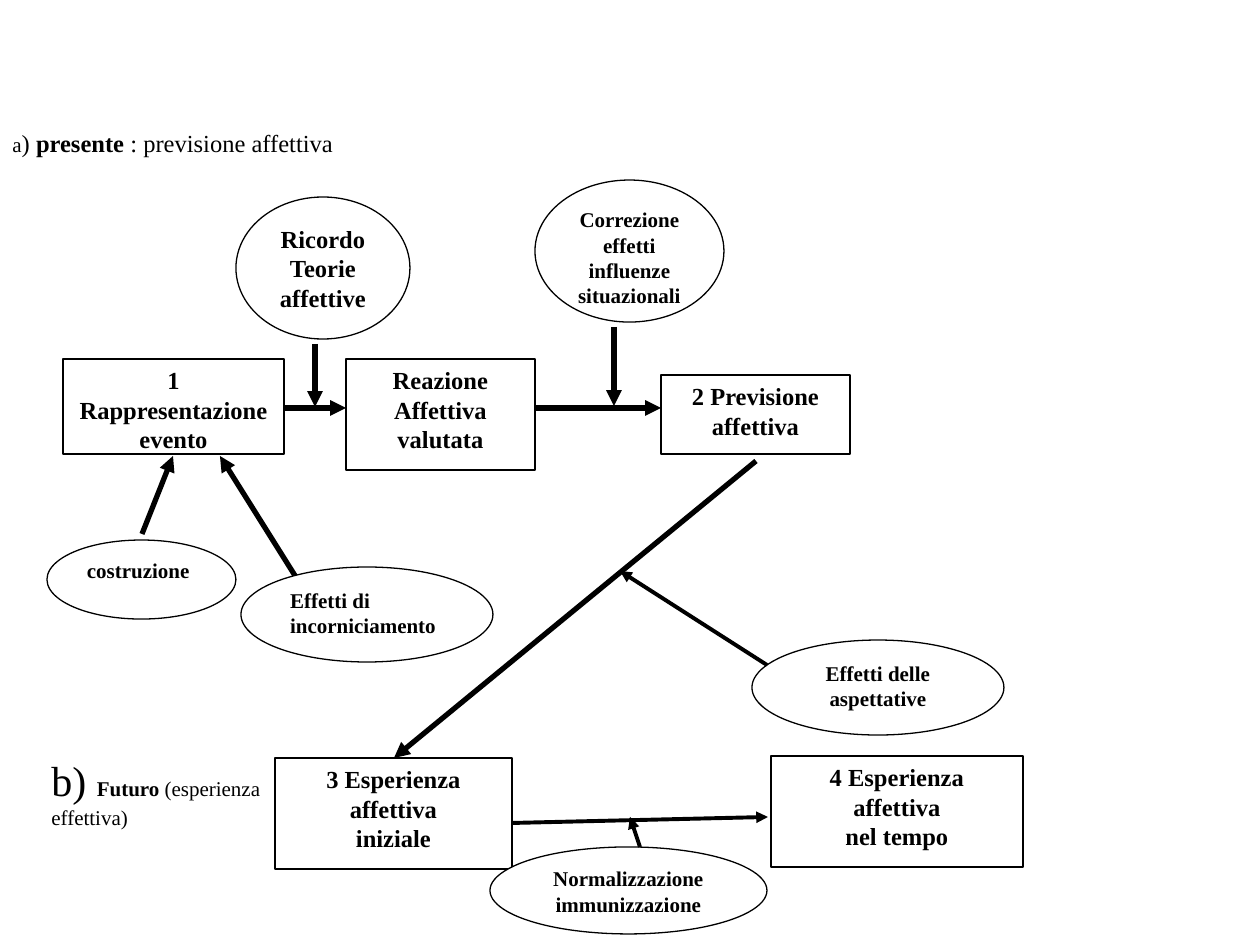
from lxml.etree import SubElement
from pptx import Presentation
from pptx.dml.color import RGBColor
from pptx.enum.shapes import MSO_CONNECTOR, MSO_SHAPE
from pptx.enum.text import MSO_ANCHOR, PP_ALIGN
from pptx.oxml.ns import qn
from pptx.util import Pt

EMU_PER_PX = 914400 / 126
FONT = "Times New Roman"
BLACK = "000000"
WHITE = "FFFFFF"


def px(length):
    return round(length * EMU_PER_PX)


def color(value):
    return RGBColor.from_string(value)


def style(font, size, bold):
    font.name = FONT
    font.size = Pt(size)
    font.bold = bold
    font.color.rgb = color(BLACK)


def add_node(slide, origin, kind, place, words, size, align=PP_ALIGN.CENTER):
    left, top, width, height = place
    node = slide.shapes.add_shape(
        kind, px(origin[0] + left), px(origin[1] + top), px(width), px(height)
    )
    node.shadow.inherit = False
    node.fill.solid()
    node.fill.fore_color.rgb = color(WHITE)
    node.line.color.rgb = color(BLACK)
    node.line.width = Pt(0.75)
    frame = node.text_frame
    frame.word_wrap = True
    frame.vertical_anchor = MSO_ANCHOR.TOP
    frame.text = words
    for paragraph in frame.paragraphs:
        paragraph.alignment = align
        for run in paragraph.runs:
            style(run.font, size, True)


def add_box(slide, origin, place, words):
    add_node(slide, origin, MSO_SHAPE.RECTANGLE, place, words, 14)


def add_oval(slide, origin, place, words, size=12, align=PP_ALIGN.CENTER):
    add_node(slide, origin, MSO_SHAPE.OVAL, place, words, size, align)


def add_arrow(slide, origin, start, end, weight):
    x, y = origin
    arrow = slide.shapes.add_connector(
        MSO_CONNECTOR.STRAIGHT,
        px(x + start[0]), px(y + start[1]), px(x + end[0]), px(y + end[1]),
    )
    arrow.line.color.rgb = color(BLACK)
    arrow.line.width = Pt(weight)
    SubElement(arrow.line._get_or_add_ln(), qn("a:tailEnd"), type="triangle")
    SubElement(arrow._element.spPr, qn("a:effectLst"))


def add_heading(slide, origin, place, parts):
    left, top, width, height = place
    heading = slide.shapes.add_textbox(
        px(origin[0] + left), px(origin[1] + top), px(width), px(height)
    )
    heading.text_frame.word_wrap = True
    paragraph = heading.text_frame.paragraphs[0]
    for words, size, bold in parts:
        run = paragraph.add_run()
        run.text = words
        style(run.font, size, bold)


def add_present(slide, origin):
    add_heading(slide, origin, (0, 2, 1260, 42), [
        ("a", 12, False), (") ", 14, False), ("presente", 14, True),
        (" : previsione affettiva", 14, False),
    ])
    add_box(slide, origin, (63, 239, 221, 95), "1\nRappresentazione\nevento")
    add_box(slide, origin, (346, 239, 189, 111), "Reazione\nAffettiva\nvalutata")
    add_box(slide, origin, (661, 255, 189, 79), "2 Previsione\naffettiva")
    add_oval(slide, origin, (236, 77, 174, 142), "Ricordo\nTeorie\naffettive", 14)
    add_oval(slide, origin, (535, 60, 189, 142),
             "Correzione effetti influenze situazionali")
    for start, end in [
        ((142, 414), (173, 336)), ((299, 462), (220, 336)),
        ((284, 288), (346, 288)), ((535, 288), (661, 288)),
        ((614, 207), (614, 286)), ((315, 224), (315, 287)),
    ]:
        add_arrow(slide, origin, start, end, 3)
    add_oval(slide, origin, (47, 420, 189, 79), "costruzione", align=PP_ALIGN.LEFT)
    add_oval(slide, origin, (241, 447, 252, 95), "Effetti di\nincorniciamento",
             align=PP_ALIGN.LEFT)


def add_expectations(slide, origin):
    add_arrow(slide, origin, (363, 1), (1, 298), 3)
    add_oval(slide, origin, (359, 180, 252, 95), "Effetti delle\naspettative")
    add_arrow(slide, origin, (374, 205), (227, 111), 2.25)


def add_future(slide, origin):
    add_box(slide, origin, (236, 10, 237, 111), "3 Esperienza\naffettiva\niniziale")
    add_heading(slide, origin, (0, 0, 256, 90), [
        ("b) ", 24, False), ("Futuro", 12, True),
        (" (esperienza effettiva)", 12, False),
    ])
    add_box(slide, origin, (732, 8, 252, 111), "4 Esperienza\naffettiva\nnel tempo")
    add_arrow(slide, origin, (473, 75), (729, 69), 2.25)
    add_oval(slide, origin, (451, 99, 277, 87), "Normalizzazione\nimmunizzazione")
    add_arrow(slide, origin, (601, 99), (591, 69), 2.25)


def main():
    presentation = Presentation()
    presentation.slide_width = px(1260)
    presentation.slide_height = px(945)
    slide = presentation.slides.add_slide(presentation.slide_layouts[6])
    add_present(slide, (0, 120))
    add_expectations(slide, (393, 460))
    add_future(slide, (39, 748))
    presentation.save("out.pptx")


if __name__ == "__main__":
    main()
